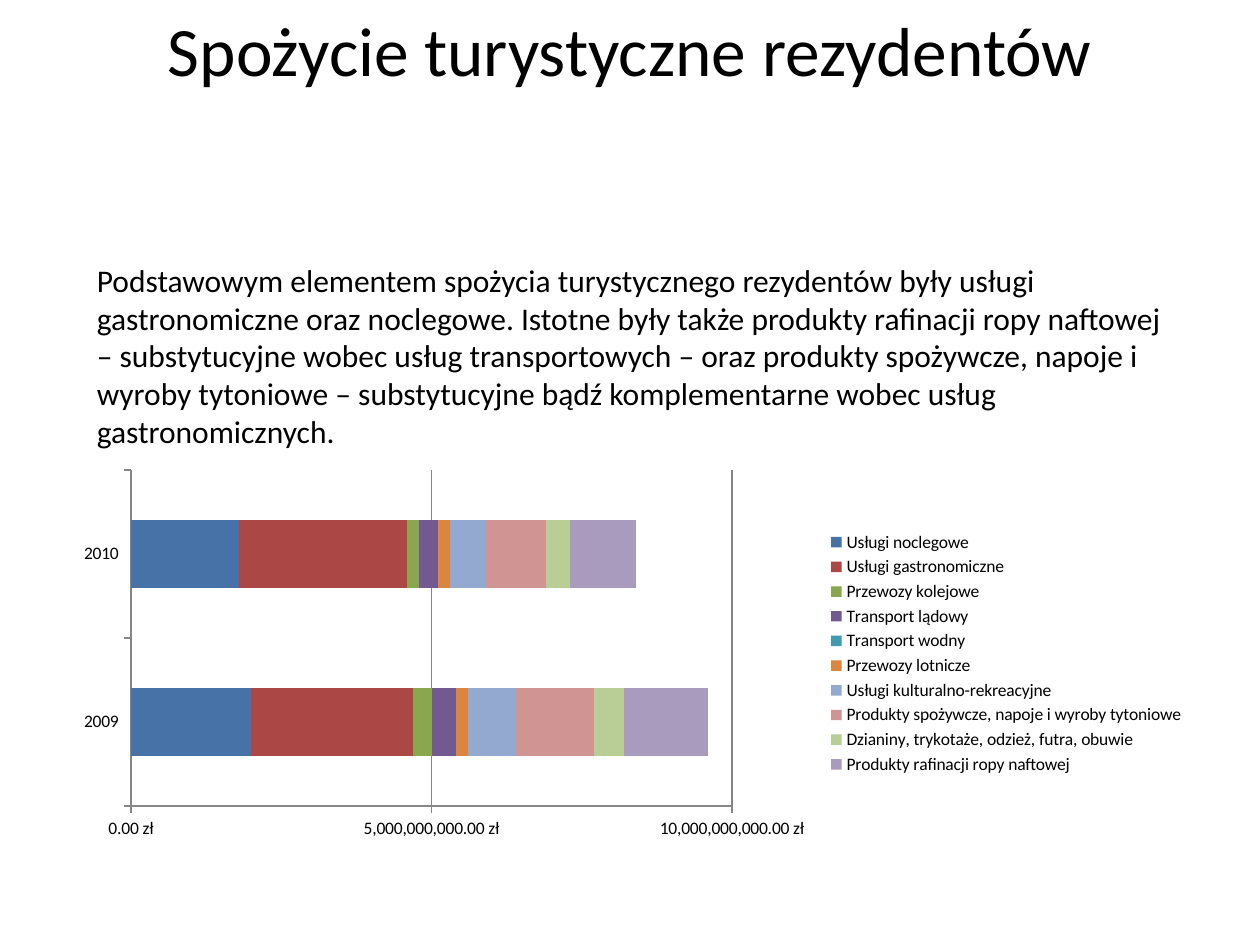
from lxml import etree
from pptx import Presentation
from pptx.chart.data import CategoryChartData
from pptx.dml.color import RGBColor
from pptx.enum.chart import XL_CHART_TYPE as ChartType
from pptx.enum.chart import XL_LEGEND_POSITION as LegendPosition
from pptx.enum.chart import XL_TICK_MARK as TickMark
from pptx.enum.text import MSO_ANCHOR as Anchor
from pptx.enum.text import PP_ALIGN as Align
from pptx.oxml.ns import qn
from pptx.util import Inches, Pt

FONT = "Calibri"
COLORS = {
    "text": "000000",
    "axis": "868686",
    "lodging": "4672A8",
    "catering": "AB4744",
    "rail": "8AA64F",
    "land": "725990",
    "water": "4299B0",
    "air": "DC853E",
    "culture": "93A9D0",
    "food": "D09493",
    "clothing": "B9CD96",
    "fuel": "A99BBE",
}
BILLION = 1_000_000_000
YEARS = ["2009", "2010"]
# Spending in billions of złoty: name, colour, one value per year
SPENDING = [
    ("Usługi noclegowe", "lodging", (2.0, 1.8)),
    ("Usługi gastronomiczne", "catering", (2.7, 2.8)),
    ("Przewozy kolejowe", "rail", (0.3, 0.2)),
    ("Transport lądowy", "land", (0.4, 0.3)),
    ("Transport wodny", "water", (0, 0)),
    ("Przewozy lotnicze", "air", (0.2, 0.2)),
    ("Usługi kulturalno-rekreacyjne", "culture", (0.8, 0.6)),
    ("Produkty spożywcze, napoje i wyroby tytoniowe", "food", (1.3, 1.0)),
    ("Dzianiny, trykotaże, odzież, futra, obuwie", "clothing", (0.5, 0.4)),
    ("Produkty rafinacji ropy naftowej", "fuel", (1.4, 1.1)),
]
BODY = (
    "Podstawowym elementem spożycia turystycznego rezydentów były usługi "
    "gastronomiczne oraz noclegowe. Istotne były także produkty rafinacji ropy "
    "naftowej – substytucyjne wobec usług transportowych – oraz produkty "
    "spożywcze, napoje i wyroby tytoniowe – substytucyjne bądź komplementarne "
    "wobec usług gastronomicznych."
)


def color(name):
    return RGBColor.from_string(COLORS[name])


def add_text(page, text, left, top, width, height, *, size,
             align=Align.LEFT, anchor=Anchor.TOP, bottom=0.05):
    box = page.shapes.add_textbox(
        Inches(left), Inches(top), Inches(width), Inches(height))
    frame = box.text_frame
    frame.word_wrap = True
    frame.vertical_anchor = anchor
    frame.margin_bottom = Inches(bottom)
    para = frame.paragraphs[0]
    para.alignment = align
    span = para.add_run()
    span.text = text
    span.font.name = FONT
    span.font.size = Pt(size)
    span.font.color.rgb = color("text")


def place_plot(chart, **edges):
    """Fix the inner plot area, as fractions of the chart frame."""
    plot_area = chart.plots[0]._element.getparent()
    layout = plot_area.find(qn("c:layout"))
    if layout is None:
        layout = etree.Element(qn("c:layout"))
        plot_area.insert(0, layout)
    manual = etree.SubElement(layout, qn("c:manualLayout"))
    settings = {"layoutTarget": "inner", "xMode": "edge", "yMode": "edge", **edges}
    for name, value in settings.items():
        etree.SubElement(manual, qn(f"c:{name}")).set("val", str(value))


def style_axis(axis):
    axis.major_tick_mark = TickMark.OUTSIDE
    axis.minor_tick_mark = TickMark.NONE
    axis.format.line.color.rgb = color("axis")
    axis.format.line.width = Pt(0.75)


def add_spending_chart(page, left, top, width, height):
    data = CategoryChartData()
    data.categories = YEARS
    for name, _, values in SPENDING:
        data.add_series(name, [round(value * BILLION) for value in values])
    chart = page.shapes.add_chart(
        ChartType.BAR_STACKED, Inches(left), Inches(top),
        Inches(width), Inches(height), data).chart
    chart.has_title = False
    chart.font.name = FONT
    chart.font.size = Pt(10)
    chart.font.color.rgb = color("text")

    # Bars
    plot = chart.plots[0]
    plot.gap_width = 150
    plot.overlap = 100
    plot.vary_by_categories = False
    for series, (_, shade, _) in zip(plot.series, SPENDING):
        series.format.fill.solid()
        series.format.fill.fore_color.rgb = color(shade)

    # Axes
    style_axis(chart.category_axis)
    amounts = chart.value_axis
    style_axis(amounts)
    amounts.minimum_scale = 0
    amounts.maximum_scale = 10 * BILLION
    amounts.major_unit = 5 * BILLION
    amounts.tick_labels.number_format = '#,##0.00\\ "zł"'
    amounts.tick_labels.number_format_is_linked = False
    amounts.has_major_gridlines = True
    amounts.major_gridlines.format.line.color.rgb = color("axis")
    amounts.major_gridlines.format.line.width = Pt(0.75)

    # Legend and plot position
    chart.has_legend = True
    chart.legend.position = LegendPosition.RIGHT
    chart.legend.include_in_layout = False
    place_plot(chart, x=0.06, y=0.02, w=0.53, h=0.88)


def main():
    deck = Presentation()
    deck.slide_width, deck.slide_height = Inches(10), Inches(7.5)
    page = deck.slides.add_slide(deck.slide_layouts[6])

    # Title sits high in its box
    add_text(page, "Spożycie turystyczne rezydentów", 0.5, 0.3, 9, 0.85,
             size=39.6, align=Align.CENTER, anchor=Anchor.MIDDLE, bottom=0.72)
    # Chart, then the commentary above it
    add_spending_chart(page, 0.5, 3.67, 9, 3.03)
    add_text(page, BODY, 0.67, 2.02, 8.74, 1.62, size=18)

    deck.save("out.pptx")


if __name__ == "__main__":
    main()
